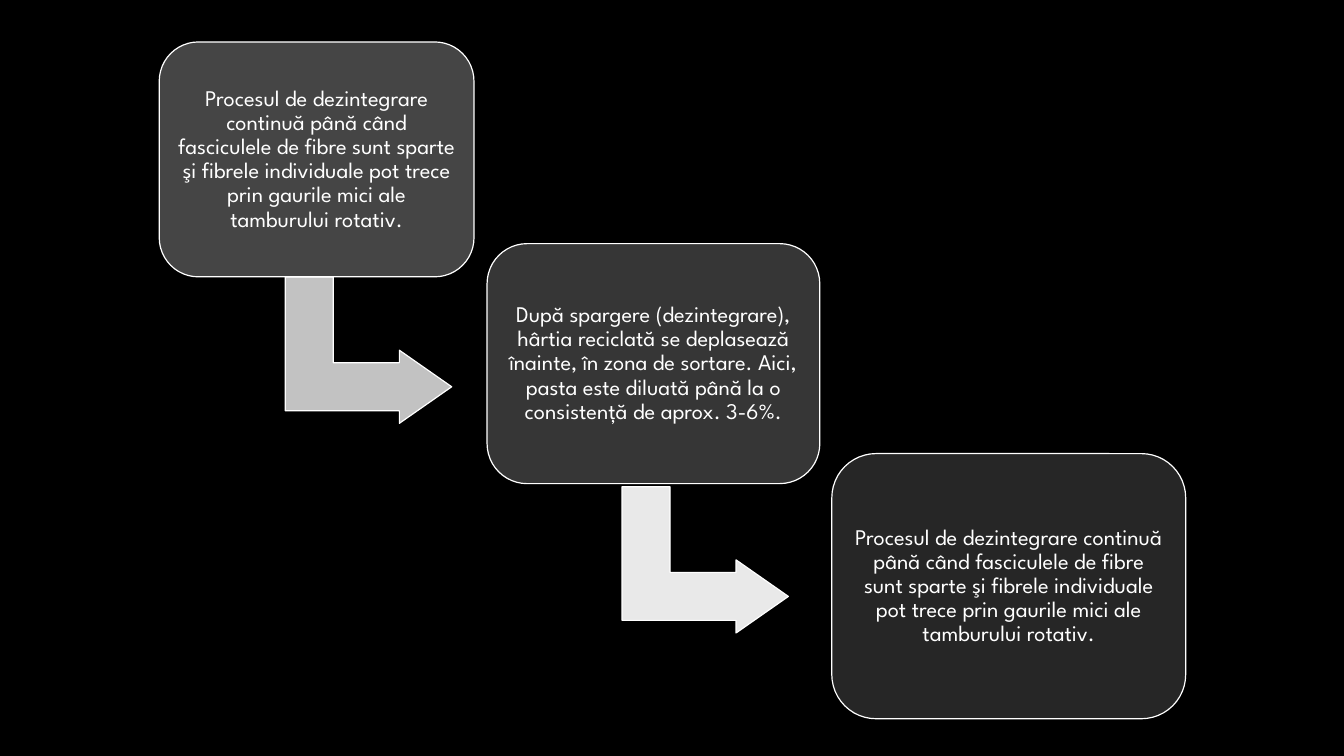
from lxml import etree
from pptx import Presentation, util as u
from pptx.dml.color import RGBColor
from pptx.enum import shapes, text
from pptx.oxml.ns import qn

FONT = "League Spartan"
WHITE, BLACK, GREY = "FFFFFF", "000000", "4D4D4D"
DISINTEGRATION = ("Procesul de dezintegrare continuă până când fasciculele de fibre "
                  "sunt sparte şi fibrele individuale pot trece prin gaurile mici ale "
                  "tamburului rotativ.")
SORTING = ("După spargere (dezintegrare), hârtia reciclată se deplasează înainte, "
           "în zona de sortare. Aici, pasta este diluată până la o consistență de "
           "aprox. 3-6%.")

# Places are percentages of the slide: left, top, width, height
STEPS = [
    (DISINTEGRATION, (11.85, 5.55, 23.42, 31.07), 90),
    (SORTING, (36.24, 32.23, 24.76, 31.75), 70),
    (DISINTEGRATION, (61.89, 60, 26.33, 35.07), 50),
]
ARROW_FILLS = ["C2C2C2", "E9E9E9"]
ARROW_PLACE = (21.98, 35.33, 10.88, 22)
ARROW_PITCH = (25.05, 27.73)

prs = Presentation()
prs.slide_width, prs.slide_height = u.Inches(13.33), u.Inches(7.5)
s = prs.slides.add_slide(prs.slide_layouts[6])


def color(value):
    return RGBColor.from_string(value)


def add_shape(kind, place, fill, adjustments):
    sizes = (prs.slide_width, prs.slide_height) * 2
    sp = s.shapes.add_shape(kind, *(int(share * size / 100) for share, size in zip(place, sizes)))
    for i, value in enumerate(adjustments):
        sp.adjustments[i] = value
    sp.shadow.inherit = False
    sp.fill.solid()
    sp.fill.fore_color.rgb = color(fill)
    sp.line.color.rgb = color(WHITE)
    sp.line.width = u.Pt(0.85)
    return sp


def add_arrow(index):
    left, top, width, height = ARROW_PLACE
    dx, dy = ARROW_PITCH
    sp = add_shape(shapes.MSO_SHAPE.BENT_UP_ARROW,
                   (left + index * dx, top + index * dy, width, height),
                   ARROW_FILLS[index], (0.328, 0.25, 0.358))
    sp.rotation = 90


def add_step(words, place, opacity):
    sp = add_shape(shapes.MSO_SHAPE.ROUNDED_RECTANGLE, place, GREY, (0.167,))
    fill = sp.fill._xPr.find(qn("a:solidFill"))
    etree.SubElement(fill[0], qn("a:alpha"), val=str(opacity * 1000))
    tf = sp.text_frame
    tf.word_wrap = True
    tf.vertical_anchor = text.MSO_ANCHOR.MIDDLE
    tf.margin_left = tf.margin_right = tf.margin_top = tf.margin_bottom = u.Inches(0.07)
    tf.text = words
    p = tf.paragraphs[0]
    p.alignment = text.PP_ALIGN.CENTER
    p.line_spacing = 0.9
    font = p.runs[0].font
    font.name, font.size = FONT, u.Pt(16)
    font.color.rgb = color(WHITE)


s.background.fill.solid()
s.background.fill.fore_color.rgb = color(BLACK)
for index, step in enumerate(STEPS):
    if index < len(ARROW_FILLS):
        add_arrow(index)
    add_step(*step)
prs.save("out.pptx")
